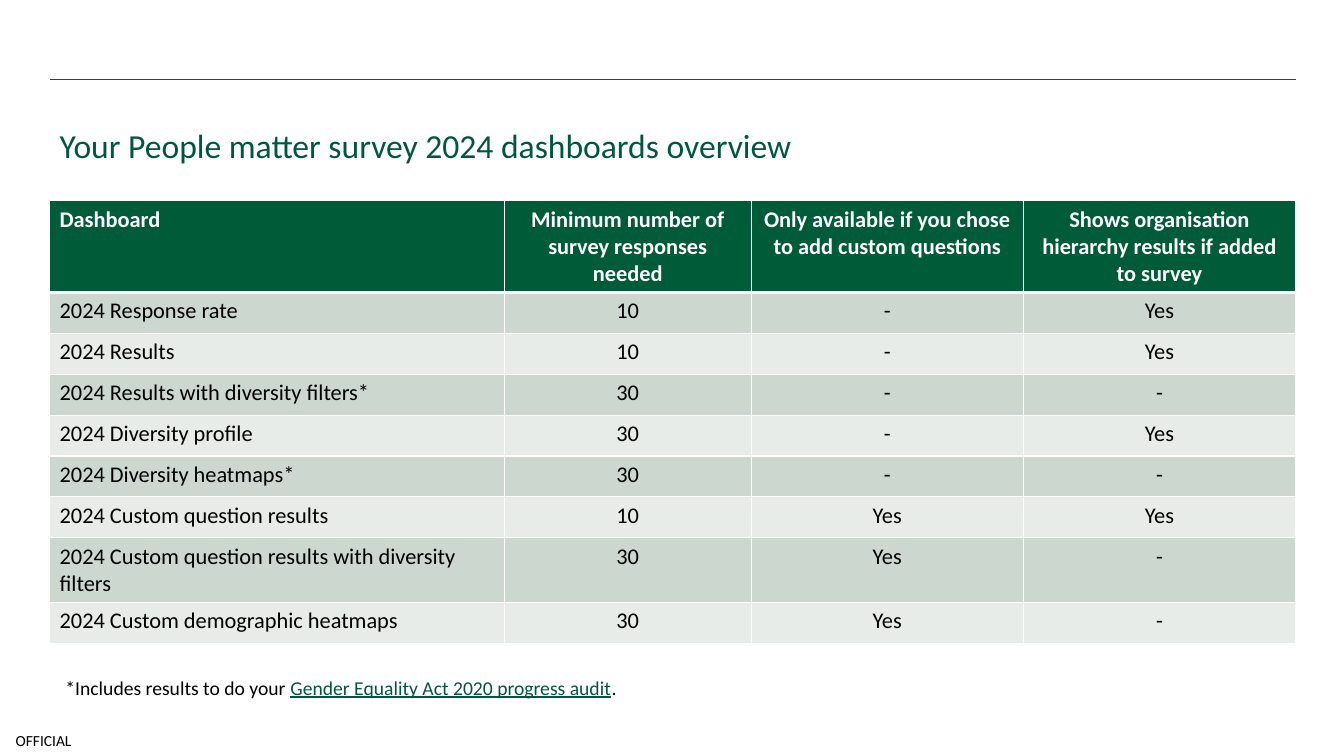
from dataclasses import dataclass
from lxml.etree import SubElement as Sub
from pptx import Presentation
from pptx.dml.color import RGBColor as Rgb
from pptx.enum.shapes import MSO_CONNECTOR as Link
from pptx.enum.text import MSO_ANCHOR as Anchor, MSO_AUTO_SIZE as Fit, PP_ALIGN as Align
from pptx.oxml.ns import qn
from pptx.util import Cm, Pt


@dataclass(frozen=True)
class Theme:
    font: str = "Calibri"
    green: str = "00573F"
    head: str = "005C38"
    bands: tuple = ("CCD7D0", "E7ECE9")
    white: str = "FFFFFF"
    black: str = "000000"
    title: int = 24
    cell: int = 16
    note: int = 14
    mark: int = 11


class Deck:
    """Draws styled elements on the current slide."""

    def __init__(self, theme):
        self.theme = theme
        self.deck = Presentation()
        self.deck.slide_width, self.deck.slide_height = Cm(33.87), Cm(19.05)
        self.slide = self.deck.slides.add_slide(self.deck.slide_layouts[5])

    def style(self, run, size, color, bold=False, under=False):
        font = run.font
        font.name, font.size, font.bold, font.underline = self.theme.font, Pt(size), bold, under
        font.color.rgb = Rgb.from_string(color)

    def rule(self, left, top, right):
        line = self.slide.shapes.add_connector(Link.STRAIGHT, Cm(left), Cm(top), Cm(right), Cm(top))
        line.line.color.rgb = Rgb.from_string(self.theme.green)
        line.line.width = Pt(1)
        Sub(line._element.spPr, qn("a:effectLst"))

    def title(self, text, left, top, width, height):
        box = self.slide.shapes.title
        box.left, box.top, box.width, box.height = Cm(left), Cm(top), Cm(width), Cm(height)
        frame = box.text_frame
        frame.text = text
        frame.auto_size, frame.vertical_anchor = Fit.NONE, Anchor.MIDDLE
        para = frame.paragraphs[0]
        para.alignment, para.line_spacing = Align.LEFT, 1.2
        self.style(para.runs[0], self.theme.title, self.theme.green)

    def text(self, parts, size, left, top, width, height, align=Align.LEFT):
        box = self.slide.shapes.add_textbox(Cm(left), Cm(top), Cm(width), Cm(height))
        frame = box.text_frame
        frame.word_wrap = True
        para = frame.paragraphs[0]
        para.alignment = align
        for words, color, under in parts:
            run = para.add_run()
            run.text = words
            self.style(run, size, color, under=under)
        return frame

    def mark(self, text, left, top, width, height):
        parts = [(text, self.theme.black, False)]
        frame = self.text(parts, self.theme.mark, left, top, width, height, Align.CENTER)
        frame.margin_left = frame.margin_right = frame.margin_top = frame.margin_bottom = 0
        frame.vertical_anchor = Anchor.MIDDLE

    def edges(self, cell, top, bottom):
        props = cell._tc.get_or_add_tcPr()
        for side, width in zip("LRTB", (1, 1, top, bottom)):
            line = Sub(props, qn(f"a:ln{side}"), w=str(Pt(width)))
            fill = Sub(line, qn("a:solidFill"))
            Sub(fill, qn("a:srgbClr"), val=self.theme.white)

    def table(self, rows, left, top, widths, heights):
        look = self.theme
        frame = self.slide.shapes.add_table(len(rows), len(widths), Cm(left), Cm(top),
                                            Cm(sum(widths)), Cm(sum(heights)))
        grid = frame.table
        for col, width in zip(grid.columns, widths):
            col.width = Cm(width)
        for r, (row, height) in enumerate(zip(rows, heights)):
            grid.rows[r].height = Cm(height)
            head = r == 0
            for c, text in enumerate(row):
                cell = grid.cell(r, c)
                cell.text = text
                self.edges(cell, 3 if r == 1 else 1, 3 if head else 1)
                cell.fill.solid()
                cell.fill.fore_color.rgb = Rgb.from_string(look.head if head else look.bands[(r - 1) % 2])
                para = cell.text_frame.paragraphs[0]
                para.alignment = Align.CENTER if c else Align.LEFT
                self.style(para.runs[0], look.cell, look.white if head else look.black, head)


ROWS = [
    ("Dashboard", "Minimum number of survey responses needed",
     "Only available if you chose to add custom questions",
     "Shows organisation hierarchy results if added to survey"),
    ("2024 Response rate", "10", "-", "Yes"),
    ("2024 Results", "10", "-", "Yes"),
    ("2024 Results with diversity filters*", "30", "-", "-"),
    ("2024 Diversity profile", "30", "-", "Yes"),
    ("2024 Diversity heatmaps*", "30", "-", "-"),
    ("2024 Custom question results", "10", "Yes", "Yes"),
    ("2024 Custom question results with diversity filters", "30", "Yes", "-"),
    ("2024 Custom demographic heatmaps", "30", "Yes", "-"),
]


def main():
    theme = Theme()
    deck = Deck(theme)
    left, width = 1.25, 31.4
    deck.rule(left, 2, left + width)
    deck.mark("OFFICIAL", 0, 18.26, 2.2, 0.79)
    deck.title("Your People matter survey 2024 dashboards overview", left, 2.4, width, 2.3)
    deck.table(ROWS, left, 5.06, (11.46, 6.22, 6.86, 6.86),
               [2.31] + [1.03] * 6 + [1.63, 1.03])
    note = [("*Includes results to do your ", theme.black, False),
            ("Gender Equality Act 2020 progress audit", theme.green, True),
            (".", theme.black, False)]
    deck.text(note, theme.note, 1.4, 16.9, 30.7, 0.86)
    deck.deck.save("out.pptx")


if __name__ == "__main__":
    main()
